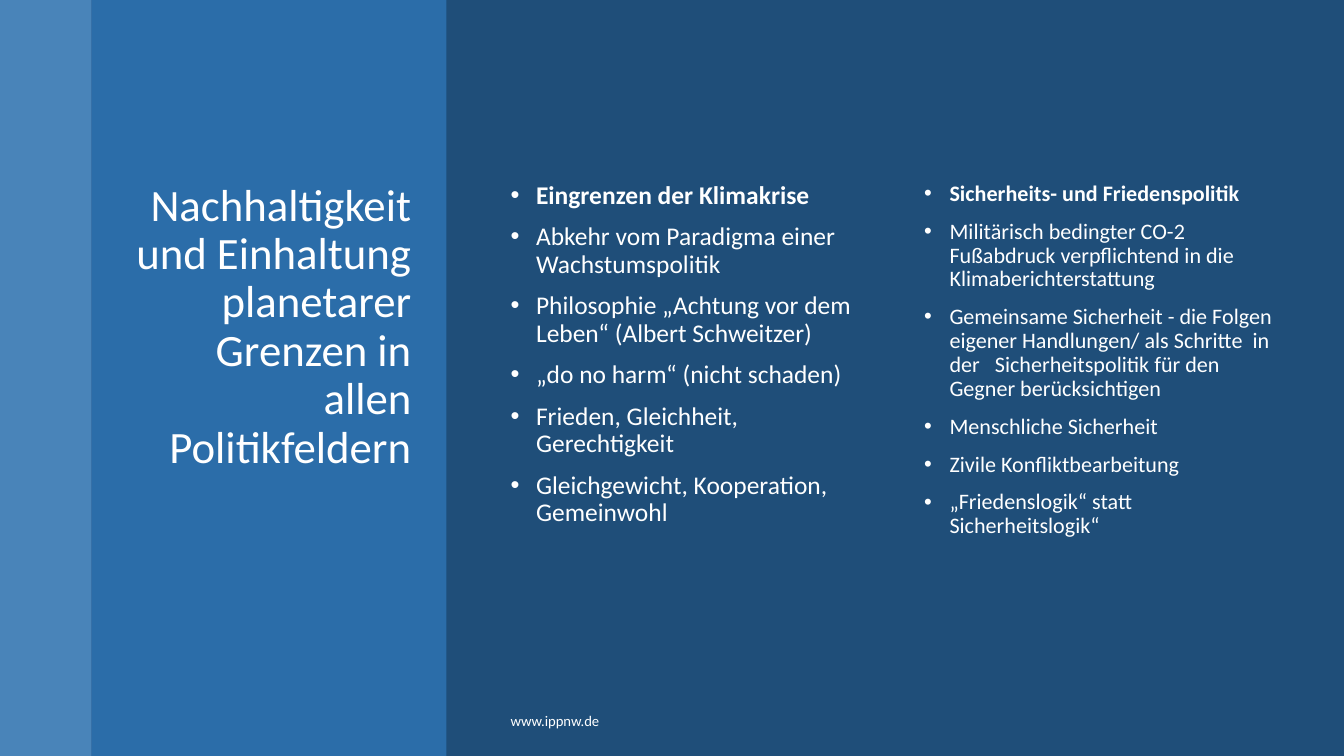
import lxml.etree
import pptx
import pptx.dml.color
import pptx.enum.shapes
import pptx.enum.text
import pptx.oxml.ns
import pptx.util

Cm = pptx.util.Cm
Align = pptx.enum.text.PP_ALIGN
Anchor = pptx.enum.text.MSO_ANCHOR

COLORS = {"background": "1F4E79", "edge": "5B9BD5", "panel": "2E75B6", "text": "FFFFFF"}
WIDTH, HEIGHT = 33.87, 19.05
EDGE_WIDTH, PANEL_WIDTH = 2.31, 8.94
BODY_TOP, BODY_HEIGHT = 4.47, 12.5
COLUMN_LEFT, COLUMN_STEP, COLUMN_WIDTH = 12.62, 10.42, 9.5

TITLE = "Nachhaltigkeit und Einhaltung planetarer Grenzen in allen Politikfeldern"
COLUMNS = [
    (18.2, [
        "Eingrenzen der Klimakrise",
        "Abkehr vom Paradigma einer Wachstumspolitik",
        "Philosophie „Achtung vor dem Leben“ (Albert Schweitzer)",
        "„do no harm“ (nicht schaden)",
        "Frieden, Gleichheit, Gerechtigkeit",
        "Gleichgewicht, Kooperation, Gemeinwohl",
    ]),
    (15.8, [
        "Sicherheits- und Friedenspolitik",
        "Militärisch bedingter CO-2 Fußabdruck verpflichtend in die Klimaberichterstattung",
        "Gemeinsame Sicherheit - die Folgen eigener Handlungen/ als Schritte  in der   "
        "Sicherheitspolitik für den Gegner berücksichtigen",
        "Menschliche Sicherheit",
        "Zivile Konfliktbearbeitung",
        "„Friedenslogik“ statt Sicherheitslogik“",
    ]),
]


def color(name):
    return pptx.dml.color.RGBColor.from_string(COLORS[name])


def add_child(parent, tag, **attributes):
    return lxml.etree.SubElement(parent, pptx.oxml.ns.qn(tag), **attributes)


def write(para, text, size, font="Calibri", bold=False, align=Align.LEFT,
          spacing=None, before=0, after=0, bullet=False):
    if bullet:
        properties = para._p.get_or_add_pPr()
        properties.set("marL", str(Cm(0.64)))
        properties.set("indent", str(-Cm(0.64)))
        add_child(add_child(properties, "a:buClr"), "a:srgbClr", val=COLORS["text"])
        add_child(properties, "a:buFont", typeface="Arial")
        add_child(properties, "a:buChar", char="•")
    para.alignment = align
    para.line_spacing = spacing
    para.space_before = pptx.util.Pt(before)
    para.space_after = pptx.util.Pt(after)
    span = para.add_run()
    span.text = text
    span.font.name = font
    span.font.size = pptx.util.Pt(size)
    span.font.bold = bold
    span.font.color.rgb = color("text")


class SlideBuilder:
    def __init__(self, deck):
        self.page = deck.slides.add_slide(deck.slide_layouts[6])
        self.page.background.fill.solid()
        self.page.background.fill.fore_color.rgb = color("background")

    def band(self, left, width, fill, opacity):
        shape = self.page.shapes.add_shape(
            pptx.enum.shapes.MSO_SHAPE.RECTANGLE, Cm(left), 0, Cm(width), Cm(HEIGHT))
        shape.shadow.inherit = False
        shape.line.fill.background()
        shape.fill.solid()
        shape.fill.fore_color.rgb = color(fill)
        tint = shape._element.spPr.find(".//" + pptx.oxml.ns.qn("a:srgbClr"))
        add_child(tint, "a:alpha", val=str(opacity * 1000))

    def text(self, left, top, width, height, lines, anchor=Anchor.TOP, before=0,
             bold_first=False, **style):
        box = self.page.shapes.add_textbox(Cm(left), Cm(top), Cm(width), Cm(height))
        frame = box.text_frame
        frame.word_wrap = True
        frame.vertical_anchor = anchor
        for index, line in enumerate(lines):
            para = frame.add_paragraph() if index else frame.paragraphs[0]
            write(para, line, before=before if index else 0,
                  bold=bold_first and index == 0, **style)


def main():
    deck = pptx.Presentation()
    deck.slide_width, deck.slide_height = Cm(WIDTH), Cm(HEIGHT)
    slide = SlideBuilder(deck)

    # Coloured bands on the left
    slide.band(0, EDGE_WIDTH, "edge", 70)
    slide.band(EDGE_WIDTH, PANEL_WIDTH, "panel", 80)

    # Title
    slide.text(2.77, BODY_TOP, 7.85, BODY_HEIGHT, [TITLE],
               size=32, align=Align.RIGHT, spacing=0.9)

    # Bullet columns
    for index, (size, lines) in enumerate(COLUMNS):
        slide.text(COLUMN_LEFT + index * COLUMN_STEP, BODY_TOP, COLUMN_WIDTH, BODY_HEIGHT,
                   lines, size=size, spacing=0.9, before=10, bullet=True, bold_first=True)

    # Footer
    slide.text(COLUMN_LEFT, 17.65, 15.8, 1.02, ["www.ippnw.de"],
               anchor=Anchor.MIDDLE, size=10.5, after=6)

    deck.save("out.pptx")


if __name__ == "__main__":
    main()
